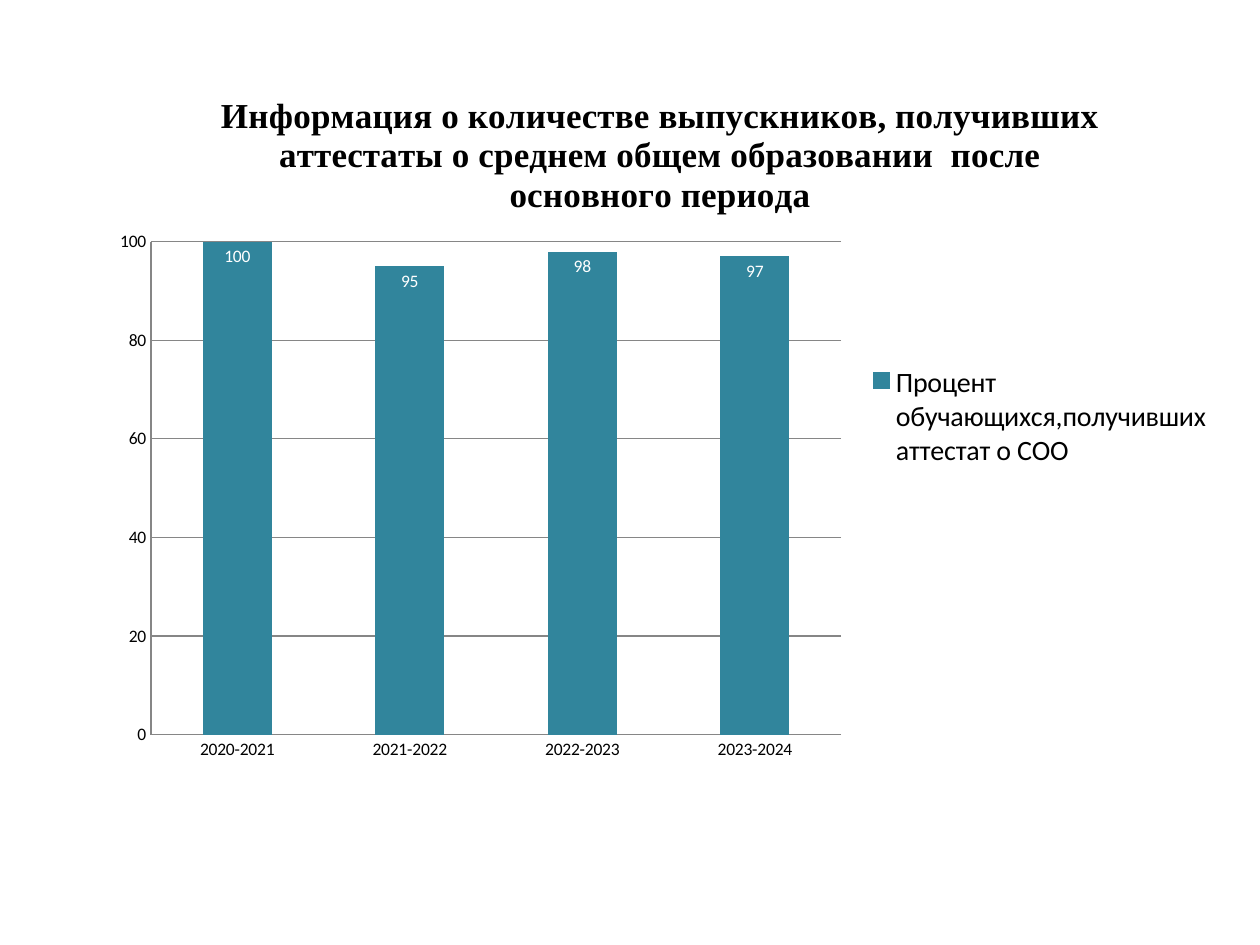
from lxml import etree
from pptx import Presentation
from pptx.chart.data import CategoryChartData
from pptx.dml.color import RGBColor
from pptx.enum.chart import (XL_CHART_TYPE, XL_LABEL_POSITION,
                             XL_LEGEND_POSITION, XL_TICK_MARK)
from pptx.util import Pt

COLUMN = XL_CHART_TYPE.COLUMN_CLUSTERED
INSIDE = XL_LABEL_POSITION.INSIDE_END
RIGHT = XL_LEGEND_POSITION.RIGHT
NO_TICK = XL_TICK_MARK.NONE

TITLE = ("Информация о количестве выпускников, получивших аттестаты "
         "о среднем общем образовании  после основного периода")
SERIES = "Процент обучающихся,получивших аттестат о СОО"
YEARS = ["2020-2021", "2021-2022", "2022-2023", "2023-2024"]
RATES = [100, 95, 98, 97]
BLACK, WHITE, TEAL, GRAY = "000000", "FFFFFF", "31859C", "868686"
C_NS = "http://schemas.openxmlformats.org/drawingml/2006/chart"


def color(code):
    return RGBColor.from_string(code)


def style(font, size, code=BLACK, name="Calibri", bold=False):
    font.size = Pt(size)
    font.name = name
    font.bold = bold
    font.color.rgb = color(code)


def set_plot(chart, x, y, w, h):
    """Fix the inner plot area, in fractions of the chart's box."""
    area = chart._chartSpace.chart.plotArea
    for old in area.findall(f"{{{C_NS}}}layout"):
        area.remove(old)
    layout = etree.Element(f"{{{C_NS}}}layout")
    manual = etree.SubElement(layout, f"{{{C_NS}}}manualLayout")
    parts = [("layoutTarget", "inner"), ("xMode", "edge"), ("yMode", "edge"),
             ("x", x), ("y", y), ("w", w), ("h", h)]
    for tag, val in parts:
        etree.SubElement(manual, f"{{{C_NS}}}{tag}", val=str(val))
    area.insert(0, layout)


def set_axes(chart):
    rates = chart.value_axis
    rates.minimum_scale, rates.maximum_scale, rates.major_unit = 0, 100, 20
    rates.has_major_gridlines = True
    for axis in (chart.category_axis, rates):
        axis.major_tick_mark = axis.minor_tick_mark = NO_TICK
        axis.format.line.color.rgb = color(GRAY)
        style(axis.tick_labels.font, 10)
    rates.major_gridlines.format.line.color.rgb = color(GRAY)


def set_bars(plot):
    plot.gap_width = 150
    plot.vary_by_categories = False
    bars = plot.series[0]
    bars.format.fill.solid()
    bars.format.fill.fore_color.rgb = color(TEAL)
    labels = bars.data_labels
    labels.show_value = True
    labels.position = INSIDE
    style(labels.font, 10, WHITE)


def add_rates(slide, left, top, width, height):
    data = CategoryChartData()
    data.categories = YEARS
    data.add_series(SERIES, RATES)
    chart = slide.shapes.add_chart(
        COLUMN, Pt(left), Pt(top), Pt(width), Pt(height), data).chart
    style(chart.font, 10)

    chart.has_title = True
    chart.chart_title.include_in_layout = False
    para = chart.chart_title.text_frame.paragraphs[0]
    para.text = TITLE
    style(para.runs[0].font, 20, name="Times New Roman", bold=True)

    chart.has_legend = True
    chart.legend.position = RIGHT
    chart.legend.include_in_layout = False
    style(chart.legend.font, 16)

    set_axes(chart)
    set_bars(chart.plots[0])
    set_plot(chart, 0.05, 0.25, 0.61, 0.7)


def main():
    deck = Presentation()
    deck.slide_width, deck.slide_height = Pt(720), Pt(540)
    slide = deck.slides.add_slide(deck.slide_layouts[6])
    add_rates(slide, 54, 37.5, 646.5, 402.5)
    deck.save("out.pptx")


if __name__ == "__main__":
    main()
